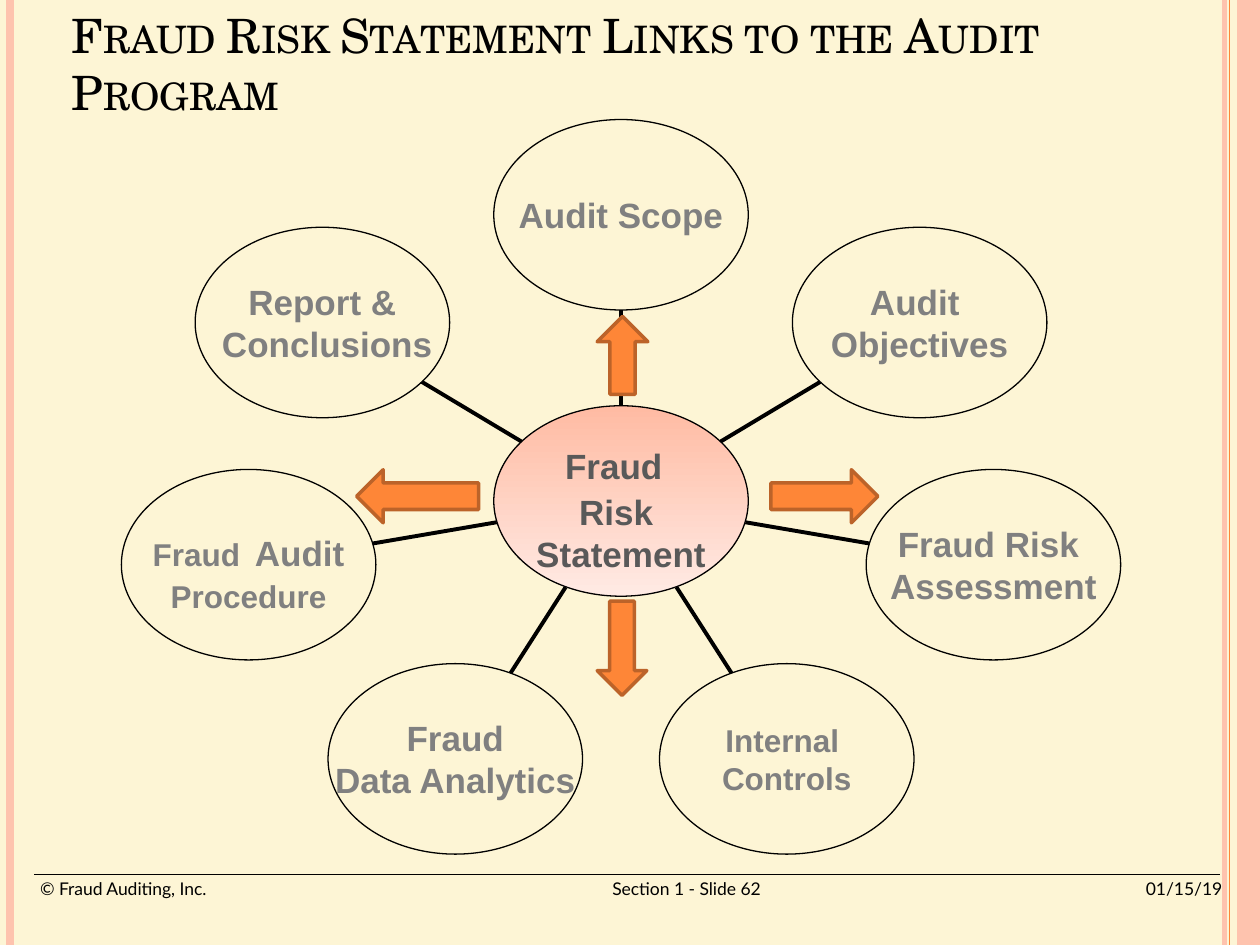
from math import cos, pi, sin

from lxml import etree
from pptx import Presentation
from pptx.dml.color import RGBColor
from pptx.enum.shapes import MSO_CONNECTOR, MSO_SHAPE
from pptx.enum.text import MSO_ANCHOR, MSO_AUTO_SIZE, PP_ALIGN
from pptx.oxml.ns import qn
from pptx.util import Cm, Pt

STRAIGHT = MSO_CONNECTOR.STRAIGHT
OVAL, RECT = MSO_SHAPE.OVAL, MSO_SHAPE.RECTANGLE
MIDDLE, CENTER, LEFT = MSO_ANCHOR.MIDDLE, PP_ALIGN.CENTER, PP_ALIGN.LEFT

CREAM = RGBColor(0xFD, 0xF5, 0xD5)
BLACK = RGBColor(0, 0, 0)
PINK = RGBColor(0xFE, 0xC3, 0xAE)
ORANGE = RGBColor(0xFE, 0x86, 0x37)
BROWN = RGBColor(0xBC, 0x63, 0x29)
GREY = RGBColor(0x80, 0x80, 0x80)
DARK_GREY = RGBColor(0x59, 0x59, 0x59)
HUB_TOP = RGBColor(0xFF, 0xBB, 0xA3)
HUB_BOTTOM = RGBColor(0xFF, 0xEA, 0xE4)

TITLE = "Fraud Risk Statement Links to the Audit Program"
FOOTER = "© Fraud Auditing, Inc. \tSection 1 - Slide 62\t01/15/19"
FOOTER_TABS = [(13.03, "ctr"), (23.83, "r")]

# Each label is a list of lines; each line is a list of (text, size) runs.
HUB = [[("Fraud", 20), (" ", 30)], [("Risk ", 20)], [("Statement", 20)]]
NODES = [  # clockwise from the top
    [[("Audit Scope", 20)]],
    [[("Audit ", 20)], [("Objectives", 20)]],
    [[("Fraud Risk ", 20)], [("Assessment", 20)]],
    [[("Internal ", 18)], [("Controls", 18)]],
    [[("Fraud", 20)], [("Data Analytics", 20)]],
    [[("Fraud", 18), (" ", 30), ("Audit", 20)], [("Procedure", 18)]],
    [[("Report &", 20)], [(" Conclusions", 20)]],
]
ARROWS = [  # shape, left, top, width, height in cm
    (MSO_SHAPE.LEFT_ARROW, 7.19, 9.47, 2.46, 1.07),
    (MSO_SHAPE.RIGHT_ARROW, 15.54, 9.47, 2.16, 1.07),
    (MSO_SHAPE.UP_ARROW, 12.04, 6.38, 1.02, 1.57),
    (MSO_SHAPE.DOWN_ARROW, 12.04, 12.12, 1, 1.9),
]
STRIPES = [  # x in cm, colour, width in points
    (0.2, PINK, 4.5),
    (24.69, PINK, 3),
    (24.79, ORANGE, 0.75),
    (24.97, ORANGE, 1.5),
]

SLIDE_W, SLIDE_H = 25.4, 19.05
CX, CY = 12.52, 10.1        # centre of the hub
OVAL_W, OVAL_H = 5.13, 3.84
RING_X, RING_Y = 7.7, 5.77  # radii of the ring of nodes

prs = Presentation()
prs.slide_width, prs.slide_height = Cm(SLIDE_W), Cm(SLIDE_H)
s = prs.slides.add_slide(prs.slide_layouts[5])
s.background.fill.solid()
s.background.fill.fore_color.rgb = CREAM


def add_line(x1, y1, x2, y2, color, width):
    ln = s.shapes.add_connector(STRAIGHT, Cm(x1), Cm(y1), Cm(x2), Cm(y2))
    ln.line.color.rgb = color
    ln.line.width = Pt(width)
    etree.SubElement(ln._element.spPr, qn("a:effectLst"))


def add_solid(kind, box, color):
    sp = s.shapes.add_shape(kind, *map(Cm, box))
    sp.shadow.inherit = False
    sp.fill.solid()
    sp.fill.fore_color.rgb = color
    return sp


def add_run(p, text, size, font, color, bold=False):
    r = p.add_run()
    r.text = text
    r.font.size, r.font.name, r.font.bold = Pt(size), font, bold
    r.font.color.rgb = color
    return r


def no_margins(tf):
    tf.margin_left = tf.margin_right = tf.margin_top = tf.margin_bottom = 0


def add_oval(x, y, lines, color):
    """Add an outlined, labelled oval centred on (x, y)."""
    sp = s.shapes.add_shape(OVAL, Cm(x - OVAL_W / 2), Cm(y - OVAL_H / 2),
                            Cm(OVAL_W), Cm(OVAL_H))
    sp.shadow.inherit = False
    sp.fill.background()
    sp.line.color.rgb = BLACK
    sp.line.width = Pt(0.75)
    tf = sp.text_frame
    tf.word_wrap = False
    tf.vertical_anchor = MIDDLE
    no_margins(tf)
    for i, runs in enumerate(lines):
        p = tf.add_paragraph() if i else tf.paragraphs[0]
        p.alignment = CENTER
        for text, size in runs:
            add_run(p, text, size, "Arial", color, True)
    return sp


# Frame of the slide
for x, color, width in STRIPES:
    add_line(x, 0, x, SLIDE_H, color, width)
band = add_solid(RECT, (24.94, 0, 0.46, SLIDE_H), PINK)
band.line.fill.background()
add_line(0.69, 17.63, 24.59, 17.63, BLACK, 1)

# Title
title = s.shapes.title
title.left, title.top, title.width, title.height = map(Cm, (1.19, 0.33, 23.32, 1.88))
tf = title.text_frame
tf.word_wrap = True
tf.auto_size = MSO_AUTO_SIZE.NONE
tf.vertical_anchor = MIDDLE
p = tf.paragraphs[0]
p.alignment = LEFT
r = add_run(p, TITLE, 27, "TeX Gyre Schola", BLACK)
r.font._element.set("cap", "small")

# Footer
footer = s.shapes.add_textbox(Cm(0.76), Cm(17.7), Cm(24), Cm(0.86))
tf = footer.text_frame
tf.word_wrap = True
no_margins(tf)
tf.margin_left = tf.margin_right = Cm(0.05)
p = tf.paragraphs[0]
tabs = etree.SubElement(p._p.get_or_add_pPr(), qn("a:tabLst"))
for pos, align in FOOTER_TABS:
    etree.SubElement(tabs, qn("a:tab"), pos=str(Cm(pos)), algn=align)
add_run(p, FOOTER, 10, "Lato", BLACK)

# Nodes on a ring, each joined to the hub by a spoke
for i, lines in enumerate(NODES):
    angle = 2 * pi * i / len(NODES)
    dx, dy = sin(angle), -cos(angle)
    add_line(CX + OVAL_W / 2 * dx, CY + OVAL_H / 2 * dy,
             CX + (RING_X - OVAL_W / 2) * dx, CY + (RING_Y - OVAL_H / 2) * dy,
             BLACK, 2.25)
    add_oval(CX + RING_X * dx, CY + RING_Y * dy, lines, GREY)

hub = add_oval(CX, CY, HUB, DARK_GREY)
hub.fill.gradient()
hub.fill.gradient_angle = 270
for stop, color, position in zip(hub.fill.gradient_stops, (HUB_TOP, HUB_BOTTOM), (0, 1)):
    stop.color.rgb = color
    stop.position = position

for kind, *box in ARROWS:
    arrow = add_solid(kind, box, ORANGE)
    arrow.line.color.rgb = BROWN
    arrow.line.width = Pt(2)

prs.save("out.pptx")
